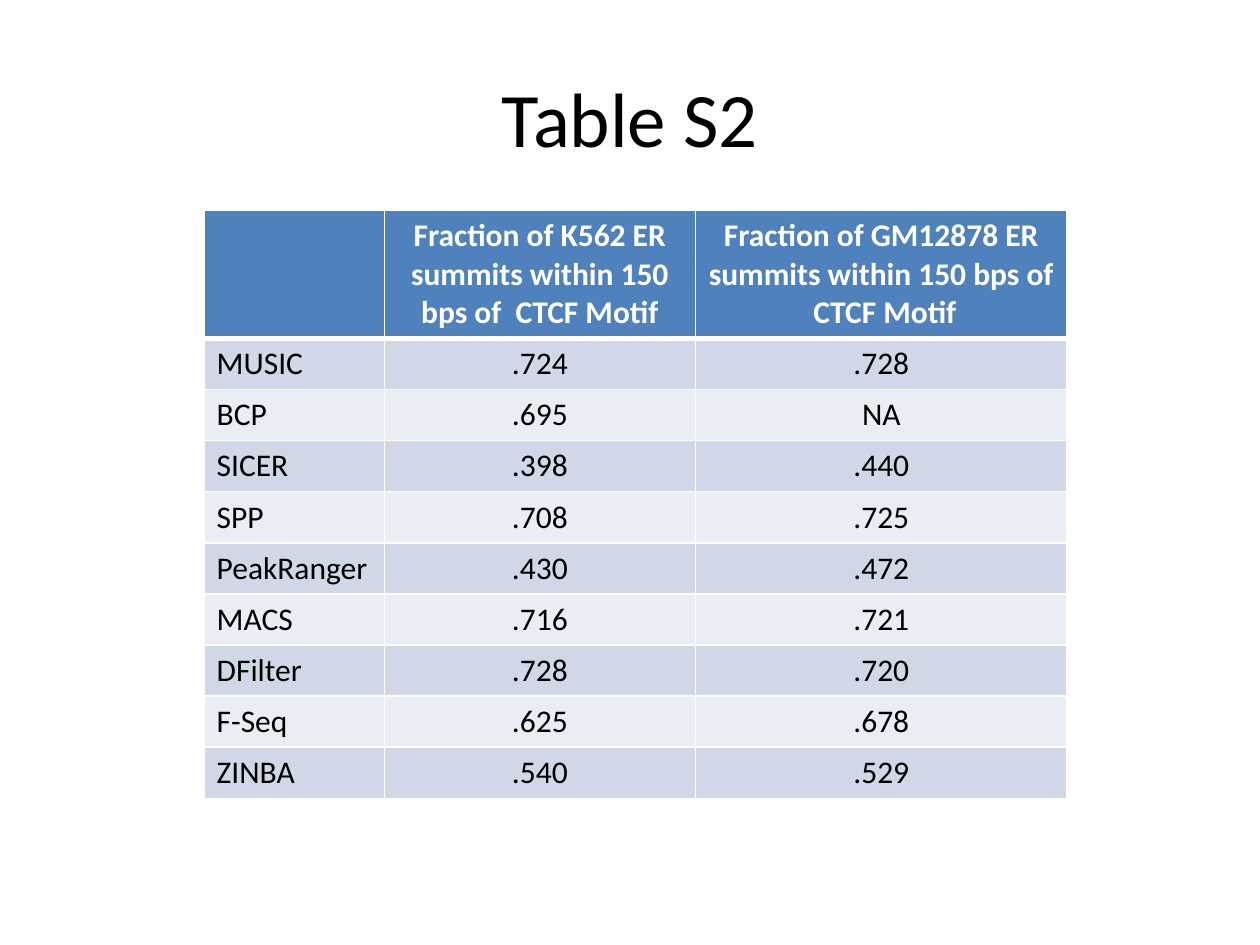
from lxml.etree import SubElement
from pptx import Presentation
from pptx.dml.color import RGBColor
from pptx.enum.text import MSO_ANCHOR, PP_ALIGN
from pptx.oxml.ns import qn
from pptx.util import Inches, Pt

FONT = "Calibri"
BLACK, WHITE = "000000", "FFFFFF"
HEADER_FILL = "4F81BD"
BAND_FILLS = ("D0D8E8", "E9EDF4")
COLUMN_WIDTHS = (1.43, 2.47, 2.95)
HEADER_HEIGHT, ROW_HEIGHT = 1, 0.4

HEADINGS = (
    "",
    "Fraction of K562 ER summits within 150 bps of  CTCF Motif",
    "Fraction of GM12878 ER summits within 150 bps of  CTCF Motif",
)
RESULTS = (
    ("MUSIC", ".724", ".728"),
    ("BCP", ".695", "NA"),
    ("SICER", ".398", ".440"),
    ("SPP", ".708", ".725"),
    ("PeakRanger", ".430", ".472"),
    ("MACS", ".716", ".721"),
    ("DFilter", ".728", ".720"),
    ("F-Seq", ".625", ".678"),
    ("ZINBA", ".540", ".529"),
)


def color(hex_value):
    return RGBColor.from_string(hex_value)


def write(frame, text, size=18, ink=BLACK, bold=False, align=PP_ALIGN.LEFT):
    paragraph = frame.paragraphs[0]
    paragraph.alignment = align
    paragraph.font.size = Pt(size)
    if text:
        run = paragraph.add_run()
        run.text = text
        run.font.name = FONT
        run.font.size = Pt(size)
        run.font.bold = bold
        run.font.color.rgb = color(ink)


def draw_borders(cell, top=1, bottom=1):
    properties = cell._tc.get_or_add_tcPr()
    for side, width in (("L", 1), ("R", 1), ("T", top), ("B", bottom)):
        border = SubElement(properties, qn(f"a:ln{side}"), w=str(Pt(width)))
        fill = SubElement(border, qn("a:solidFill"))
        SubElement(fill, qn("a:srgbClr"), val=WHITE)


def fill_cell(cell, text, background, top=1, bottom=1, anchor=MSO_ANCHOR.TOP, **text_format):
    draw_borders(cell, top, bottom)
    cell.fill.solid()
    cell.fill.fore_color.rgb = color(background)
    cell.vertical_anchor = anchor
    write(cell.text_frame, text, **text_format)


def add_title(slide, text):
    title = slide.shapes.title
    title.left, title.top = Inches(0.5), Inches(0.3)
    title.width, title.height = Inches(9), Inches(1.25)
    title.text_frame.vertical_anchor = MSO_ANCHOR.MIDDLE
    write(title.text_frame, text, size=44, align=PP_ALIGN.CENTER)


def add_results_table(slide):
    height = HEADER_HEIGHT + ROW_HEIGHT * len(RESULTS)
    table = slide.shapes.add_table(
        len(RESULTS) + 1, len(HEADINGS),
        Inches(1.62), Inches(1.67), Inches(sum(COLUMN_WIDTHS)), Inches(height),
    ).table
    for column, width in zip(table.columns, COLUMN_WIDTHS):
        column.width = Inches(width)
    for row in table.rows:
        row.height = Inches(ROW_HEIGHT)
    table.rows[0].height = Inches(HEADER_HEIGHT)

    for column, heading in enumerate(HEADINGS):
        fill_cell(table.cell(0, column), heading, HEADER_FILL, bottom=3,
                  ink=WHITE, bold=True, align=PP_ALIGN.CENTER)
    for row, (method, *fractions) in enumerate(RESULTS, start=1):
        background = BAND_FILLS[(row - 1) % 2]
        top = 3 if row == 1 else 1
        fill_cell(table.cell(row, 0), method, background, top=top)
        for column, fraction in enumerate(fractions, start=1):
            fill_cell(table.cell(row, column), fraction, background, top=top,
                      anchor=MSO_ANCHOR.MIDDLE, align=PP_ALIGN.CENTER)


def main():
    presentation = Presentation()
    presentation.slide_width = Inches(10)
    presentation.slide_height = Inches(7.5)
    slide = presentation.slides.add_slide(presentation.slide_layouts[5])
    add_title(slide, "Table S2")
    add_results_table(slide)
    presentation.save("out.pptx")


if __name__ == "__main__":
    main()
